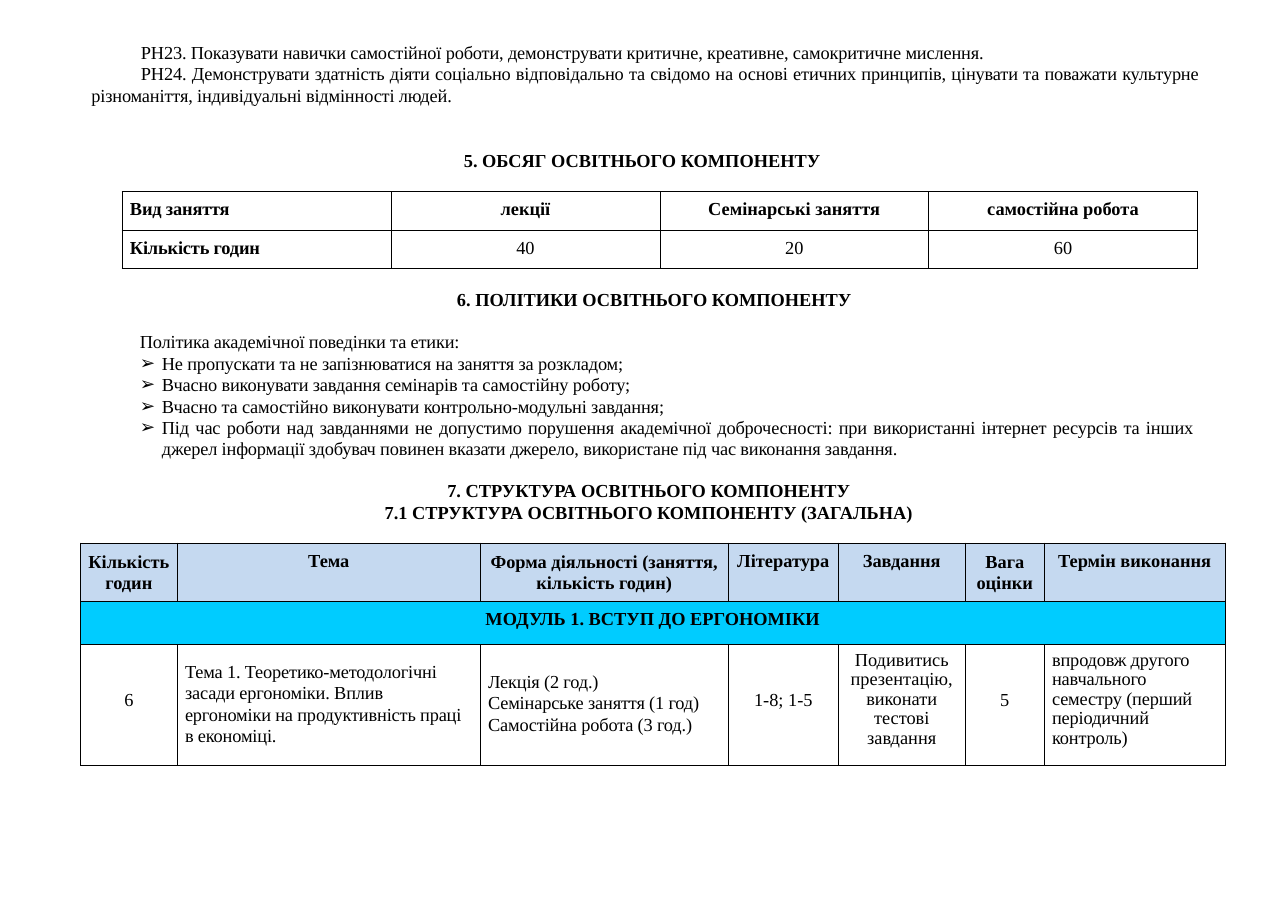
from dataclasses import dataclass
from lxml.etree import SubElement
from pptx import Presentation
from pptx.dml.color import RGBColor
from pptx.enum.text import PP_ALIGN
from pptx.oxml.ns import qn
from pptx.slide import Slide
from pptx.table import Table, _Cell
from pptx.text.text import TextFrame, _Paragraph
from pptx.util import Inches, Pt

LEFT, MID, FULL = PP_ALIGN.LEFT, PP_ALIGN.CENTER, PP_ALIGN.JUSTIFY


@dataclass(frozen=True)
class Theme:
    font: str = "Times New Roman"
    size: float = 12
    lead: float = 14
    tight: float = 12.7
    track: int = -10
    ink: RGBColor = RGBColor(0, 0, 0)
    head: RGBColor = RGBColor(0xC5, 0xD9, 0xF0)
    band: RGBColor = RGBColor(0x00, 0xCC, 0xFF)
    thin: float = 0.5
    thick: float = 1


THEME = Theme()


@dataclass(frozen=True)
class Style:
    align: PP_ALIGN = LEFT
    bold: bool = False
    lead: float = THEME.lead
    track: int = 0


@dataclass(frozen=True)
class Box:
    left: float
    top: float
    width: float
    lines: tuple[str, ...]
    style: Style
    margin: float = 0
    indent: float = 0
    mark: str = ""


@dataclass(frozen=True)
class Entry:
    text: str
    style: Style
    top: float = 0.06
    fill: RGBColor | None = None


@dataclass(frozen=True)
class Grid:
    left: float
    top: float
    cols: tuple[float, ...]
    rows: tuple[float, ...]
    cells: tuple[tuple[Entry, ...], ...]
    rim: float


TITLE = Style(MID, bold=True)
LABEL = Style(bold=True, track=THEME.track)
VALUE = Style(MID)
PROSE = Style(FULL, track=THEME.track)
NOTE = Style(track=THEME.track)

BOXES = (
    Box(0.83, 0.38, 10.06, (
        "РН23. Показувати навички самостійної роботи, демонструвати критичне, "
        "креативне, самокритичне мислення.",
        "РН24. Демонструвати здатність діяти соціально відповідально та свідомо на основі "
        "етичних принципів, цінувати та поважати культурне різноманіття, "
        "індивідуальні відмінності людей."), PROSE, indent=0.45),
    Box(2.83, 1.36, 6, ("5. ОБСЯГ ОСВІТНЬОГО КОМПОНЕНТУ",), TITLE),
    Box(2.94, 2.62, 6, ("6. ПОЛІТИКИ ОСВІТНЬОГО КОМПОНЕНТУ",), TITLE),
    Box(1.27, 3, 9.57, ("Політика академічної поведінки та етики:",), PROSE),
    Box(1.27, 3.2, 9.57, (
        "Не пропускати та не запізнюватися на заняття за розкладом;",
        "Вчасно виконувати завдання семінарів та самостійну роботу;",
        "Вчасно та самостійно виконувати контрольно-модульні завдання;",
        "Під час роботи над завданнями не допустимо порушення академічної доброчесності: "
        "при використанні інтернет ресурсів та інших джерел інформації здобувач повинен "
        "вказати джерело, використане під час виконання завдання."),
        PROSE, margin=0.2, indent=-0.2, mark="➢"),
    Box(2.89, 4.36, 6, (
        "7. СТРУКТУРА ОСВІТНЬОГО КОМПОНЕНТУ",
        "7.1 СТРУКТУРА ОСВІТНЬОГО КОМПОНЕНТУ (ЗАГАЛЬНА)"), TITLE),
)


def head(text: str, top: float = 0.06) -> Entry:
    return Entry(text, TITLE, top, THEME.head)


HOURS = Grid(1.11, 1.74, (2.44,) * 4, (0.35,) * 2, (
    (Entry("Вид заняття", LABEL),
     *(Entry(kind, TITLE) for kind in ("лекції", "Семінарські заняття", "самостійна робота"))),
    (Entry("Кількість годин", LABEL),
     *(Entry(count, VALUE) for count in ("40", "20", "60"))),
), THEME.thick)

PLAN = Grid(0.73, 4.93, (0.88, 2.75, 2.25, 1, 1.15, 0.72, 1.64), (0.53, 0.39, 1.1), (
    (head("Кількість годин", 0.07), head("Тема"),
     head("Форма діяльності (заняття, кількість годин)", 0.07), head("Література"),
     head("Завдання"), head("Вага оцінки", 0.07), head("Термін виконання")),
    (Entry("МОДУЛЬ 1. ВСТУП ДО ЕРГОНОМІКИ", TITLE, fill=THEME.band),),
    (Entry("6", VALUE, 0.41),
     Entry("Тема 1. Теоретико-методологічні\vзасади ергономіки. Вплив\v"
           "ергономіки на продуктивність праці\vв економіці.", NOTE, 0.15),
     Entry("Лекція (2 год.)\vСемінарське заняття (1 год)\vСамостійна робота (3 год.)",
           NOTE, 0.24),
     Entry("1-8; 1-5", VALUE, 0.41),
     Entry("Подивитись\vпрезентацію,\vвиконати\vтестові\vзавдання",
           Style(MID, lead=THEME.tight), 0.06),
     Entry("5", VALUE, 0.41),
     Entry("впродовж другого\vнавчального\vсеместру (перший\vперіодичний\vконтроль)",
           Style(lead=THEME.tight, track=THEME.track), 0.06)),
), THEME.thin)


def dress(para: _Paragraph, style: Style) -> None:
    para.alignment = style.align
    para.line_spacing = Pt(style.lead)
    for run in para.runs:
        font = run.font
        font.name, font.size, font.bold = THEME.font, Pt(THEME.size), style.bold
        font.color.rgb = THEME.ink
        if style.track:
            run._r.get_or_add_rPr().set("spc", str(style.track))


def indent(para: _Paragraph, box: Box) -> None:
    props = para._p.get_or_add_pPr()
    props.set("marL", str(Inches(box.margin)))
    props.set("indent", str(Inches(box.indent)))
    if box.mark:
        SubElement(props, qn("a:buFont"), typeface="Arial")
        SubElement(props, qn("a:buChar"), char=box.mark)


def clear(frame: TextFrame) -> None:
    frame.margin_left = frame.margin_right = frame.margin_top = frame.margin_bottom = 0
    frame.word_wrap = True


def write(slide: Slide, box: Box) -> None:
    height = len(box.lines) * THEME.lead / 72
    frame = slide.shapes.add_textbox(
        Inches(box.left), Inches(box.top), Inches(box.width), Inches(height)).text_frame
    clear(frame)
    frame.text = "\n".join(box.lines)
    for para in frame.paragraphs:
        dress(para, box.style)
        indent(para, box)


def edge(cell: _Cell, sides: dict[str, float]) -> None:
    """Rule the cell's sides; widths are in points."""
    props = cell._tc.get_or_add_tcPr()
    for side, width in sides.items():
        line = SubElement(props, qn(f"a:ln{side}"), w=str(Pt(width)))
        SubElement(SubElement(line, qn("a:solidFill")), qn("a:srgbClr"), val=str(THEME.ink))


def fill(cell: _Cell, entry: Entry) -> None:
    cell.margin_top = Inches(entry.top)
    if entry.style.align == LEFT:
        cell.margin_left = Inches(0.07)
    cell.text_frame.text = entry.text
    for para in cell.text_frame.paragraphs:
        dress(para, entry.style)


def draw(slide: Slide, grid: Grid) -> Table:
    table = slide.shapes.add_table(
        len(grid.rows), len(grid.cols), Inches(grid.left), Inches(grid.top),
        Inches(sum(grid.cols)), Inches(sum(grid.rows))).table
    table.first_row = table.horz_banding = False
    for col, width in zip(table.columns, grid.cols):
        col.width = Inches(width)
    last = len(grid.cols) - 1
    for y, (height, row) in enumerate(zip(grid.rows, grid.cells)):
        table.rows[y].height = Inches(height)
        if len(row) == 1:
            table.cell(y, 0).merge(table.cell(y, last))
        for x in range(last + 1):
            cell = table.cell(y, x)
            cell.margin_left = cell.margin_right = cell.margin_top = cell.margin_bottom = 0
            edge(cell, {"L": THEME.thin if x else grid.rim,
                        "R": THEME.thin if x < last else grid.rim,
                        "T": grid.rim, "B": grid.rim})
            tint = row[min(x, len(row) - 1)].fill
            if tint is None:
                cell.fill.background()
            else:
                cell.fill.solid()
                cell.fill.fore_color.rgb = tint
            if x < len(row):
                fill(cell, row[x])
    return table


def main() -> None:
    deck = Presentation()
    deck.slide_width, deck.slide_height = Inches(11.69), Inches(8.27)
    slide = deck.slides.add_slide(deck.slide_layouts[6])
    for box in BOXES:
        write(slide, box)
    for grid in (HOURS, PLAN):
        draw(slide, grid)
    deck.save("out.pptx")


if __name__ == "__main__":
    main()
